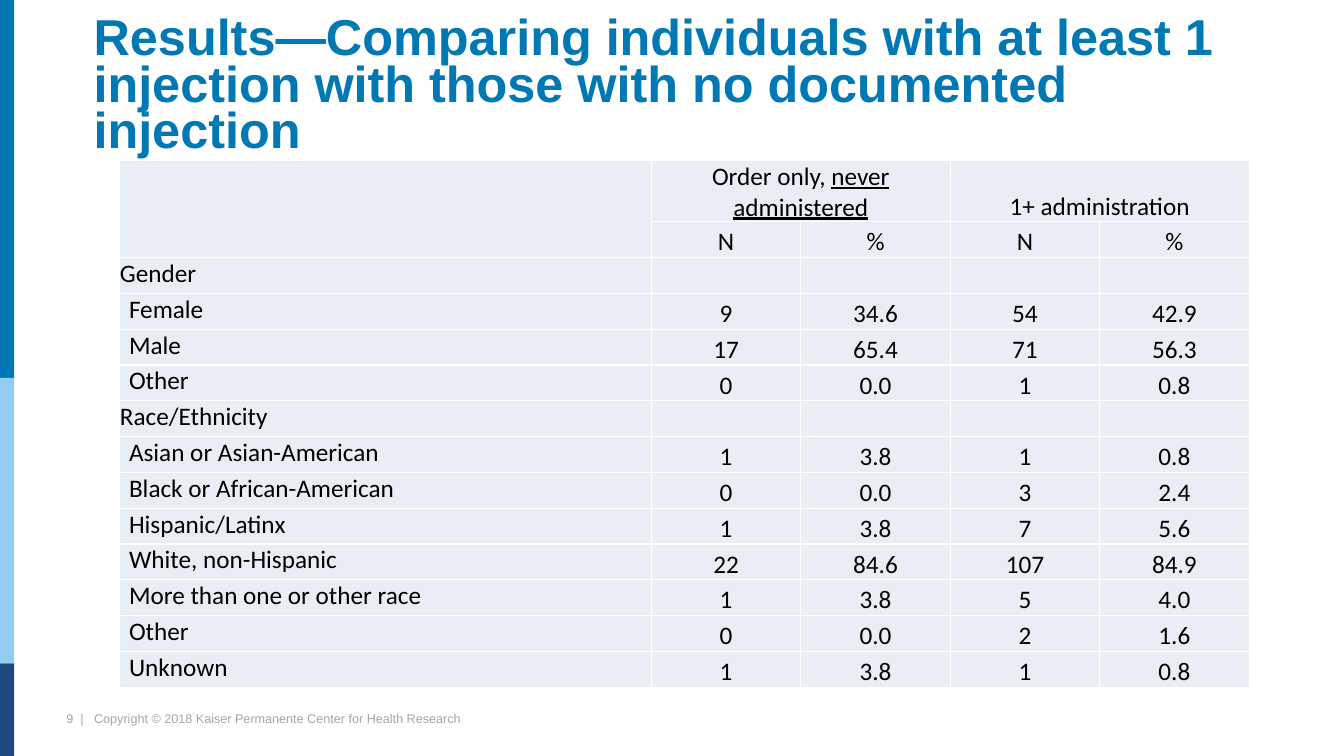
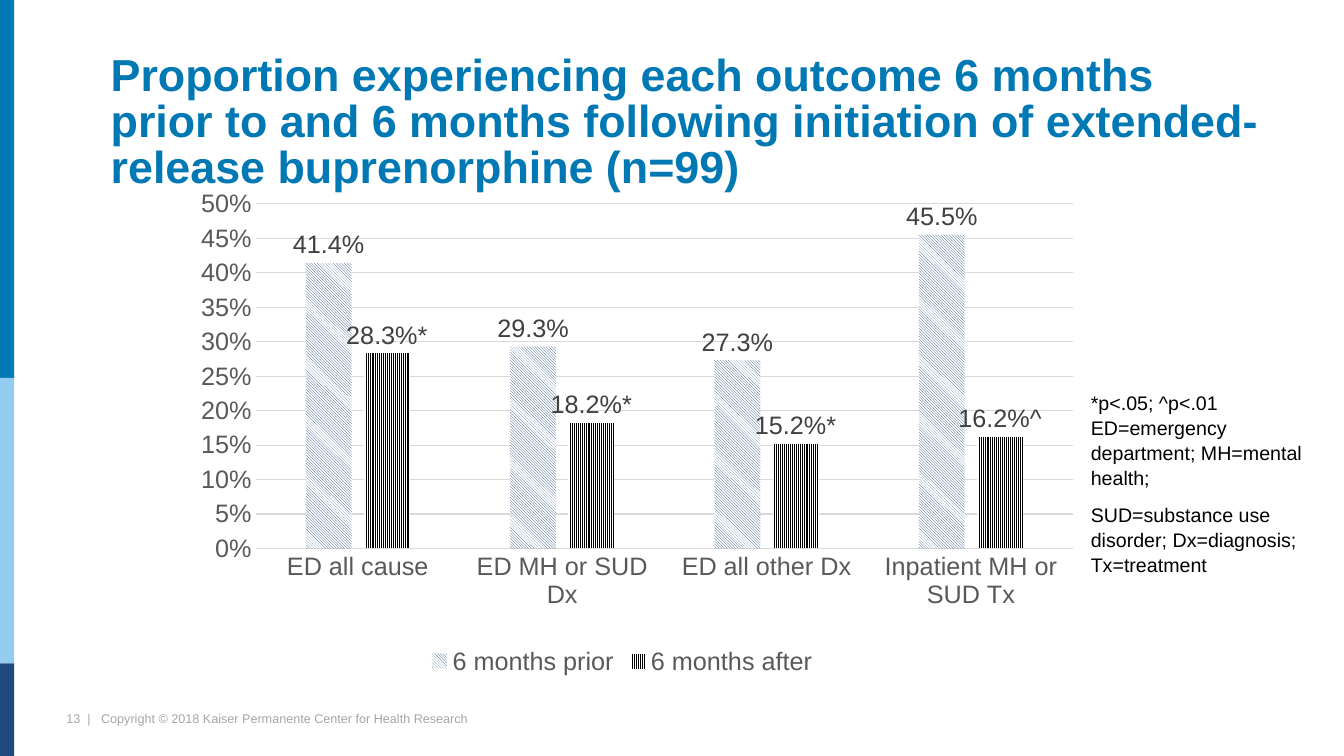
from lxml.etree import SubElement
from pptx import Presentation
from pptx.chart.data import CategoryChartData
from pptx.dml.color import RGBColor
from pptx.enum.chart import XL_CHART_TYPE as ChartType
from pptx.enum.chart import XL_LABEL_POSITION as LabelPosition
from pptx.enum.chart import XL_LEGEND_POSITION as LegendPosition
from pptx.enum.chart import XL_TICK_MARK as TickMark
from pptx.enum.dml import MSO_PATTERN_TYPE as Pattern
from pptx.enum.shapes import MSO_SHAPE as Shape
from pptx.enum.text import MSO_ANCHOR as Anchor
from pptx.enum.text import PP_ALIGN as Align
from pptx.oxml.ns import qn
from pptx.util import Inches, Pt

BLUE, SKY, NAVY = "0078B3", "92CCF0", "1F497D"
BLACK, WHITE = "000000", "FFFFFF"
FOOTER_GRAY, AXIS_GRAY, LABEL_GRAY, GRID_GRAY = "A6A6A6", "595959", "404040", "D9D9D9"
CELL_FILL = "E9EDF4"

SLIDE_HEIGHT = 7.5
BANDS = [(0, BLUE), (3.75, SKY), (6.58, NAVY)]
COPYRIGHT = "Copyright © 2018 Kaiser Permanente Center for Health Research"

TABLE_WIDTH, TABLE_HEIGHT = 11.21, 5.23
LABEL_WIDTH, HEADER_HEIGHT = 5.28, 0.61
GROUPS = [
    ("Gender", [
        ("Female", "9", "34.6", "54", "42.9"),
        ("Male", "17", "65.4", "71", "56.3"),
        ("Other", "0", "0.0", "1", "0.8"),
    ]),
    ("Race/Ethnicity", [
        ("Asian or Asian-American", "1", "3.8", "1", "0.8"),
        ("Black or African-American", "0", "0.0", "3", "2.4"),
        ("Hispanic/Latinx", "1", "3.8", "7", "5.6"),
        ("White, non-Hispanic", "22", "84.6", "107", "84.9"),
        ("More than one or other race", "1", "3.8", "5", "4.0"),
        ("Other", "0", "0.0", "2", "1.6"),
        ("Unknown", "1", "3.8", "1", "0.8"),
    ]),
]

OUTCOMES = ["ED all cause", "ED MH or SUD Dx", "ED all other Dx", "Inpatient MH or SUD Tx"]
SERIES = [
    ("6 months prior", [0.414, 0.293, 0.273, 0.455],
     Pattern.LIGHT_DOWNWARD_DIAGONAL, NAVY, []),
    ("6 months after", [0.283, 0.182, 0.152, 0.162],
     Pattern.LIGHT_VERTICAL, BLACK, ["28.3%*", "18.2%*", "15.2%*", "16.2%^"]),
]


def color(value):
    return RGBColor.from_string(value)


def style(font, size, fill, name="Arial", bold=False, underline=False):
    font.size = Pt(size)
    font.name = name
    font.bold = bold
    font.underline = underline
    font.color.rgb = color(fill)


def write(para, text, align=None, spacing=None, after=None, **format):
    span = para.add_run()
    span.text = text
    style(span.font, **format)
    if align is not None:
        para.alignment = align
    if spacing is not None:
        para.line_spacing = spacing
    if after is not None:
        para.space_after = Pt(after)


def add_text(page, left, top, width, height, lines, anchor=Anchor.TOP, **format):
    box = page.shapes.add_textbox(Inches(left), Inches(top), Inches(width), Inches(height))
    frame = box.text_frame
    frame.word_wrap = True
    frame.vertical_anchor = anchor
    for index, (text, after) in enumerate(lines):
        para = frame.add_paragraph() if index else frame.paragraphs[0]
        write(para, text, after=after, **format)


def add_title(page, left, top, text, size):
    add_text(page, left, top, 11.67, 1, [(text, None)], anchor=Anchor.BOTTOM,
             size=size, fill=BLUE, bold=True, spacing=Pt(33))


def add_page(deck, number):
    page = deck.slides.add_slide(deck.slide_layouts[6])
    ends = [top for top, _ in BANDS[1:]] + [SLIDE_HEIGHT]
    for (top, fill), end in zip(BANDS, ends):
        band = page.shapes.add_shape(
            Shape.RECTANGLE, 0, Inches(top), Inches(0.14), Inches(end - top))
        band.shadow.inherit = False
        band.fill.solid()
        band.fill.fore_color.rgb = color(fill)
        band.line.fill.background()
    add_text(page, 0.56, 7, 4.23, 0.25, [(f"{number}  |   {COPYRIGHT}", None)],
             size=9, fill=FOOTER_GRAY)
    return page


def format_cell(cell):
    properties = cell._tc.get_or_add_tcPr()
    for side in ("a:lnL", "a:lnR", "a:lnT", "a:lnB"):
        line = SubElement(properties, qn(side), w=str(Pt(1)))
        SubElement(SubElement(line, qn("a:solidFill")), qn("a:srgbClr"), val=WHITE)
    cell.fill.solid()
    cell.fill.fore_color.rgb = color(CELL_FILL)
    cell.margin_left = cell.margin_right = cell.margin_top = Inches(0.01)
    cell.margin_bottom = 0


def fill_cell(cell, text, **format):
    write(cell.text_frame.paragraphs[0], text, size=18, fill=BLACK, name="Calibri", **format)


def fill_label(cell, text, indent=0.01):
    fill_cell(cell, text)
    cell.margin_left = Inches(indent)


def fill_value(cell, text, **format):
    fill_cell(cell, text, align=Align.CENTER, **format)
    cell.vertical_anchor = Anchor.BOTTOM


def add_results_table(page):
    row_count = 2 + sum(1 + len(rows) for _, rows in GROUPS)
    table = page.shapes.add_table(
        row_count, 5, Inches(1.18), Inches(1.59),
        Inches(TABLE_WIDTH), Inches(TABLE_HEIGHT)).table
    table.first_row = table.horz_banding = False
    for index, column in enumerate(table.columns):
        column.width = Inches((TABLE_WIDTH - LABEL_WIDTH) / 4 if index else LABEL_WIDTH)
    for index, row in enumerate(table.rows):
        row.height = Inches(
            (TABLE_HEIGHT - HEADER_HEIGHT) / (row_count - 1) if index else HEADER_HEIGHT)
    for cell in table.iter_cells():
        format_cell(cell)

    table.cell(0, 0).merge(table.cell(1, 0))
    for column in (1, 3):
        table.cell(0, column).merge(table.cell(0, column + 1))
    fill_value(table.cell(0, 1), "Order only, ")
    fill_value(table.cell(0, 1), "never administered", underline=True)
    fill_value(table.cell(0, 3), "1+ administration")
    for column, text in enumerate(["N", "%"] * 2, 1):
        fill_value(table.cell(1, column), text)

    position = 2
    for group, rows in GROUPS:
        fill_label(table.cell(position, 0), group)
        for position, (label, *values) in enumerate(rows, position + 1):
            fill_label(table.cell(position, 0), label, indent=0.1)
            for column, value in enumerate(values, 1):
                fill_value(table.cell(position, column), value)
        position += 1


def place_plot(chart, **fractions):
    area = chart.element.find(".//" + qn("c:plotArea"))
    for layout in area.findall(qn("c:layout")):
        area.remove(layout)
    layout = SubElement(area, qn("c:layout"))
    area.insert(0, layout)
    manual = SubElement(layout, qn("c:manualLayout"))
    settings = {"layoutTarget": "inner", "xMode": "edge", "yMode": "edge", **fractions}
    for name, value in settings.items():
        SubElement(manual, qn(f"c:{name}"), val=str(value))


def format_axes(chart):
    for axis in (chart.category_axis, chart.value_axis):
        axis.major_tick_mark = axis.minor_tick_mark = TickMark.NONE
        style(axis.tick_labels.font, 18, AXIS_GRAY)
    values = chart.value_axis
    values.minimum_scale, values.maximum_scale, values.major_unit = 0, 0.5, 0.05
    values.tick_labels.number_format = "0%"
    values.tick_labels.number_format_is_linked = False
    values.format.line.fill.background()
    for line in (chart.category_axis.format.line, values.major_gridlines.format.line):
        line.color.rgb = color(GRID_GRAY)
        line.width = Pt(0.75)


def format_series(series, pattern, ink, notes):
    fill = series.format.fill
    fill.patterned()
    fill.pattern = pattern
    fill.fore_color.rgb = color(ink)
    fill.back_color.rgb = color(WHITE)
    labels = series.data_labels
    labels.show_value = True
    labels.number_format = "0.0%"
    labels.number_format_is_linked = False
    labels.position = LabelPosition.OUTSIDE_END
    style(labels.font, 18, LABEL_GRAY)
    for index, note in enumerate(notes):
        label = series.points[index].data_label
        write(label.text_frame.paragraphs[0], note, size=18, fill=LABEL_GRAY)
        label.position = LabelPosition.OUTSIDE_END


def add_outcome_chart(page):
    data = CategoryChartData(number_format="0.0%")
    data.categories = OUTCOMES
    for name, values, *_ in SERIES:
        data.add_series(name, values)
    chart = page.shapes.add_chart(
        ChartType.COLUMN_CLUSTERED, Inches(1.51), Inches(1.72),
        Inches(9.32), Inches(5.03), data).chart
    style(chart.font, 18, BLACK)
    chart.has_title = False
    chart.has_legend = True
    chart.legend.position = LegendPosition.BOTTOM
    chart.legend.include_in_layout = False
    style(chart.legend.font, 18, AXIS_GRAY)
    plot = chart.plots[0]
    plot.gap_width, plot.overlap = 219, -27
    plot.vary_by_categories = False
    format_axes(chart)
    for series, (_, _, pattern, ink, notes) in zip(plot.series, SERIES):
        format_series(series, pattern, ink, notes)
    place_plot(chart, x=0.11, y=0.06, w=0.87, h=0.68)


def build_comparison(deck):
    page = add_page(deck, 9)
    add_title(page, 0.83, 0.62,
              "Results—Comparing individuals with at least 1 injection "
              "with those with no documented injection", 36)
    add_results_table(page)


def build_outcomes(deck):
    page = add_page(deck, 13)
    add_outcome_chart(page)
    add_title(page, 1, 0.96,
              "Proportion experiencing each outcome 6 months prior to and 6 months "
              "following initiation of extended-release buprenorphine (n=99)", 32)
    add_text(page, 10.72, 3.81, 2.61, 1.97, [
        ("*p<.05; ^p<.01", 0),
        ("ED=emergency department; MH=mental health;", 8),
        ("SUD=substance use disorder; Dx=diagnosis; Tx=treatment", 8),
    ], size=14, fill=BLACK, spacing=1.07)


def main():
    deck = Presentation()
    deck.slide_width, deck.slide_height = Inches(13.33), Inches(SLIDE_HEIGHT)
    build_comparison(deck)
    build_outcomes(deck)
    deck.save("out.pptx")


if __name__ == "__main__":
    main()
